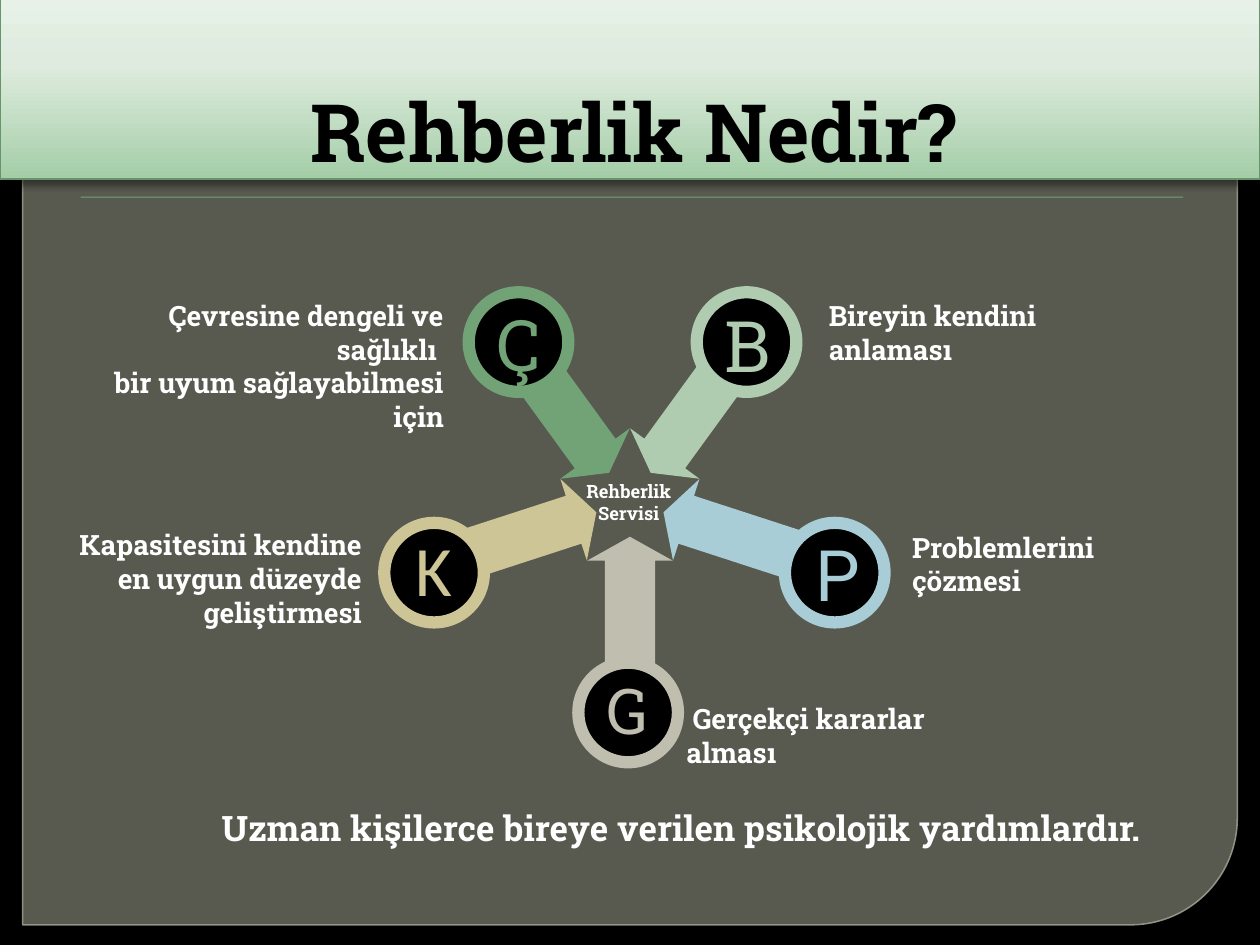
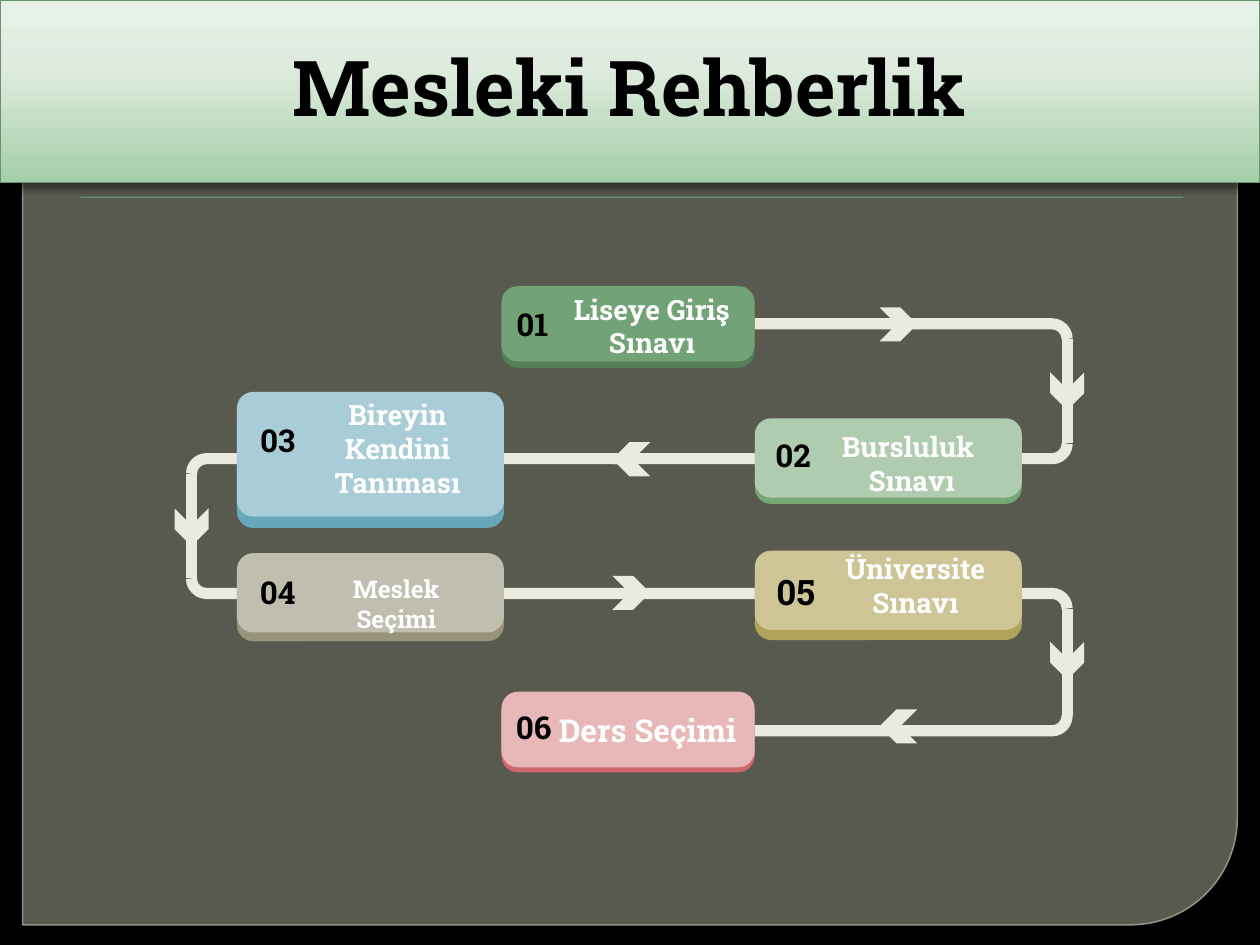
import math
from dataclasses import dataclass

import lxml.etree
import pptx
import pptx.dml.color
import pptx.enum.shapes
import pptx.enum.text
import pptx.oxml.ns
import pptx.shapes.autoshape
import pptx.shapes.base
import pptx.slide
import pptx.util

EMU_PER_PX = 9144  # 100 px to the inch
SLAB = "Roboto Slab"
BLACK, WHITE = "000000", "FFFFFF"
GREEN, MINT, BLUE, STONE, SAND, ROSE = "72A376", "B0CCB0", "A8CDD7", "C0BEAF", "CEC597", "E8B7B7"
PIPE = "EAEBDE"
PIPE_WIDTH = 6.38
BEND_RADIUS = 12

Preset = pptx.enum.shapes.MSO_SHAPE
Align = pptx.enum.text.PP_ALIGN
Anchor = pptx.enum.text.MSO_ANCHOR
Shape = pptx.shapes.autoshape.Shape
Slide = pptx.slide.Slide
Box = tuple[int, int, int, int]
Point = tuple[float, float]


@dataclass(frozen=True)
class TextStyle:
    size: float = 16
    color: str = WHITE
    bold: bool = True
    font: str = SLAB
    align: Align = Align.LEFT
    anchor: Anchor = Anchor.TOP
    wrap: bool = True
    inset: bool = True


@dataclass(frozen=True)
class Goal:
    """One aim of guidance: a ringed initial and its explanation."""
    initial: str
    color: str
    ring: tuple[int, int]
    initial_at: tuple[int, int]
    text: str
    text_box: Box
    align: Align = Align.LEFT
    size: float = 40.5
    font: str = SLAB
    indent: int = 0


@dataclass(frozen=True)
class Step:
    number: str
    label: str
    face: str
    shade: str
    card: Box
    depth: int
    number_at: tuple[int, int]
    label_box: Box
    number_size: int = 18
    label_size: int = 16


@dataclass(frozen=True)
class Turn:
    """A U-shaped pipe: along the top, down at x, back along the bottom."""
    x: int
    top: int
    bottom: int
    start: int
    end: int


GOALS = [
    Goal("Ç", GREEN, (372, 232), (393, 253),
         "Çevresine dengeli ve sağlıklı \nbir uyum sağlayabilmesi için", (73, 232, 289, 118), Align.RIGHT),
    Goal("B", MINT, (553, 232), (574, 254), "Bireyin kendini anlaması", (648, 232, 247, 64)),
    Goal("P", BLUE, (623, 415), (646, 436), "Problemlerini çözmesi", (714, 416, 226, 64), font="Roboto"),
    Goal("G", STONE, (459, 526), (479, 544), "Gerçekçi kararlar alması", (535, 552, 247, 64),
         size=36, indent=5),
    Goal("K", SAND, (305, 415), (325, 432), "Kapasitesini kendine en uygun düzeyde geliştirmesi",
         (24, 414, 273, 91), Align.RIGHT, font="Calibri"),
]
ARROW_COLORS = [STONE, BLUE, MINT, GREEN, SAND]

STEPS = [
    Step("01", "Liseye Giriş Sınavı", GREEN, "527E56", (398, 227, 201, 60), 5,
         (396, 237), (442, 227, 151, 64)),
    Step("02", "Bursluluk \nSınavı", MINT, "76A776", (599, 332, 212, 63), 5,
         (603, 341), (648, 336, 151, 64)),
    Step("03", "Bireyin Kendini\nTanıması", BLUE, "66A7B9", (188, 311, 212, 99), 9,
         (194, 329), (235, 311, 161, 100)),
    Step("04", "Meslek Seçimi", STONE, "98947C", (188, 439, 212, 63), 7,
         (194, 450), (239, 451, 151, 57), label_size=14),
    Step("05", "Üniversite Sınavı", SAND, "B1A35A", (599, 437, 212, 63), 8,
         (605, 448), (651, 433, 151, 64), number_size=20),
    Step("06", "Ders Seçimi", ROSE, "CF6868", (398, 549, 201, 60), 4,
         (397, 557), (429, 559, 170, 40), label_size=18),
]
TURNS = [
    Turn(847, 257, 364, 521, 486),
    Turn(152, 364, 471, 490, 795),
    Turn(847, 471, 580, 661, 487),
]
CHEVRONS = [(698, 244, 0), (832, 297, 90), (486, 351, 180), (137, 405, 90),
            (832, 511, 90), (486, 457, 0), (698, 563, 180)]


def px(length: float) -> int:
    return round(length * EMU_PER_PX)


def rgb(color: str) -> pptx.dml.color.RGBColor:
    return pptx.dml.color.RGBColor.from_string(color)


def add_xml(parent, tag: str, **attributes):
    element = lxml.etree.SubElement(parent, pptx.oxml.ns.qn(tag))
    for key, value in attributes.items():
        element.set(key, str(value))
    return element


def set_opacity(shape: Shape, color_at: str, percent: int) -> None:
    color = shape._element.spPr.xpath(color_at + "/a:srgbClr")[0]
    add_xml(color, "a:alpha", val=percent * 1000)


def paint(shape: Shape, fill: str | None, line: str | None = None, width: float = 0) -> None:
    shape.shadow.inherit = False
    if fill:
        shape.fill.solid()
        shape.fill.fore_color.rgb = rgb(fill)
    else:
        shape.fill.background()
    if line:
        shape.line.color.rgb = rgb(line)
        shape.line.width = pptx.util.Pt(width)
    else:
        shape.line.fill.background()


def add_preset(slide: Slide, preset: Preset, box: Box, fill: str,
               line: str | None = None, width: float = 0) -> Shape:
    shape = slide.shapes.add_shape(preset, *map(px, box))
    paint(shape, fill, line, width)
    return shape


def cast_shadow(shape: Shape, opacity: int, blur: int, distance: int) -> None:
    effects = shape._element.spPr.xpath("a:effectLst")[0]
    shadow = add_xml(effects, "a:outerShdw", blurRad=pptx.util.Pt(blur), dist=pptx.util.Pt(distance),
                     dir=90 * 60000, algn="ctr", rotWithShape=0)
    add_xml(add_xml(shadow, "a:srgbClr", val=BLACK), "a:alpha", val=opacity * 1000)


def write(shape: pptx.shapes.base.BaseShape, text: str, style: TextStyle) -> None:
    frame = shape.text_frame
    frame.text = text
    frame.word_wrap = style.wrap
    frame.vertical_anchor = style.anchor
    if not style.inset:
        frame.margin_left = frame.margin_top = frame.margin_right = frame.margin_bottom = 0
    for paragraph in frame.paragraphs:
        paragraph.alignment = style.align
        for run in paragraph.runs:
            run.font.name = style.font
            run.font.size = pptx.util.Pt(style.size)
            run.font.bold = style.bold
            run.font.color.rgb = rgb(style.color)


def add_text(slide: Slide, box: Box, text: str, style: TextStyle) -> Shape:
    textbox = slide.shapes.add_textbox(*map(px, box))
    write(textbox, text, style)
    return textbox


def add_outline(slide: Slide, points: list[Point], close: bool) -> Shape:
    (x, y), *rest = [(px(x), px(y)) for x, y in points]
    builder = slide.shapes.build_freeform(x, y)
    builder.add_line_segments(rest, close=close)
    return builder.convert_to_shape()


def add_framed_slide(deck) -> Slide:
    """Add a blank slide with the black ground, the panel and the thin rule."""
    slide = deck.slides.add_slide(deck.slide_layouts[6])
    slide.background.fill.solid()
    slide.background.fill.fore_color.rgb = rgb(BLACK)
    panel = add_preset(slide, Preset.ROUND_2_DIAG_RECTANGLE, (18, 16, 964, 718), "888B7B", "9DA090", 0.87)
    panel.adjustments[0] = 0.118
    panel.adjustments[1] = 0
    set_opacity(panel, "a:solidFill", 65)
    set_opacity(panel, "a:ln/a:solidFill", 88)
    rule = add_preset(slide, Preset.RECTANGLE, (64, 156, 875, 1), GREEN)
    cast_shadow(rule, 75, 1, 1)
    return slide


def add_title_band(slide: Slide, title: str, top: int, size: int, anchor: Anchor) -> Shape:
    band = add_preset(slide, Preset.RECTANGLE, (0, top, 1000, 145), MINT, "67946B", 0.75)
    band.fill.gradient()
    band.fill.gradient_angle = 90
    stops = band._element.spPr.xpath("a:gradFill/a:gsLst")[0]
    stops.clear()
    for percent, color in [(0, "A4CEA7"), (62, "DEEBDE"), (100, "E7F1E8")]:
        add_xml(add_xml(stops, "a:gs", pos=percent * 1000), "a:srgbClr", val=color)
    cast_shadow(band, 43, 4, 3)
    write(band, title, TextStyle(size, BLACK, align=Align.CENTER, anchor=anchor))
    return band


def add_star_arrow(slide: Slide, turn: float, color: str) -> None:
    """Draw an arrow aimed at the star's centre, turned from straight below it."""
    profile = [(0, 28), (-34, 47), (-20, 47), (-20, 159), (20, 159), (20, 47), (34, 47)]
    cos, sin = math.cos(turn), math.sin(turn)
    points = [(500 + x * cos + y * sin, 398 - x * sin + y * cos) for x, y in profile]
    paint(add_outline(slide, points, close=True), color)


def add_goal(slide: Slide, goal: Goal) -> None:
    add_preset(slide, Preset.OVAL, (*goal.ring, 79, 79), BLACK, goal.color, 7)
    add_text(slide, (*goal.initial_at, 38, 38), goal.initial,
             TextStyle(goal.size, goal.color, False, goal.font, Align.CENTER, Anchor.MIDDLE, False, False))
    explanation = add_text(slide, goal.text_box, goal.text, TextStyle(align=goal.align))
    if goal.indent:
        explanation.text_frame.paragraphs[0]._p.get_or_add_pPr().set("indent", str(px(goal.indent)))


def add_elbow(slide: Slide, start: int, x: int, y: int, down: int) -> None:
    """Draw a level pipe from start that bends at x; down is 1 or -1."""
    side = 1 if x > start else -1
    bend = [math.radians(angle) for angle in range(0, 91, 15)]
    points = [(start, y)] + [(x - side * BEND_RADIUS * (1 - math.sin(angle)),
                              y + down * BEND_RADIUS * (1 - math.cos(angle))) for angle in bend]
    paint(add_outline(slide, points, close=False), None, PIPE, PIPE_WIDTH)


def add_turn(slide: Slide, turn: Turn) -> None:
    add_elbow(slide, turn.start, turn.x, turn.top, 1)
    add_elbow(slide, turn.end, turn.x, turn.bottom, -1)
    drop = slide.shapes.add_connector(
        pptx.enum.shapes.MSO_CONNECTOR.STRAIGHT, px(turn.x), px(turn.top + BEND_RADIUS),
        px(turn.x), px(turn.bottom - BEND_RADIUS))
    drop.line.color.rgb = rgb(PIPE)
    drop.line.width = pptx.util.Pt(PIPE_WIDTH)
    add_xml(drop._element.spPr, "a:effectLst")


def add_step(slide: Slide, step: Step) -> None:
    left, top, width, height = step.card
    for offset, color in [(step.depth, step.shade), (0, step.face)]:
        card = add_preset(slide, Preset.ROUNDED_RECTANGLE, (left, top + offset, width, height), color)
        card.adjustments[0] = 13 / height
    add_text(slide, (*step.number_at, 53, 40), step.number,
             TextStyle(step.number_size, BLACK, align=Align.CENTER))
    add_text(slide, step.label_box, step.label, TextStyle(step.label_size, align=Align.CENTER))


def build_guidance(deck) -> None:
    slide = add_framed_slide(deck)
    band = add_title_band(slide, "Rehberlik Nedir?", -3, 46, Anchor.BOTTOM)
    band.text_frame.margin_bottom = 0
    band.text_frame.paragraphs[0]._p.get_or_add_pPr().set("marL", str(px(6)))
    for index, color in enumerate(ARROW_COLORS):
        add_star_arrow(slide, math.tau * index / len(ARROW_COLORS), color)
    add_text(slide, (455, 376, 88, 45), "Rehberlik\nServisi",
             TextStyle(10.5, align=Align.CENTER, wrap=False))
    for goal in GOALS:
        add_goal(slide, goal)
    add_text(slide, (166, 635, 755, 44), "Uzman kişilerce bireye verilen psikolojik yardımlardır.",
             TextStyle(20))


def build_career_path(deck) -> None:
    slide = add_framed_slide(deck)
    band = add_title_band(slide, "Mesleki Rehberlik", 0, 44, Anchor.MIDDLE)
    band.text_frame.paragraphs[0].line_spacing = 0.9
    for turn in TURNS:
        add_turn(slide, turn)
    for step in STEPS:
        add_step(slide, step)
    for left, top, rotation in CHEVRONS:
        add_preset(slide, Preset.CHEVRON, (left, top, 30, 27), PIPE).rotation = rotation


def main() -> None:
    deck = pptx.Presentation()
    deck.slide_width, deck.slide_height = px(1000), px(750)
    build_guidance(deck)
    build_career_path(deck)
    deck.save("out.pptx")


if __name__ == "__main__":
    main()
